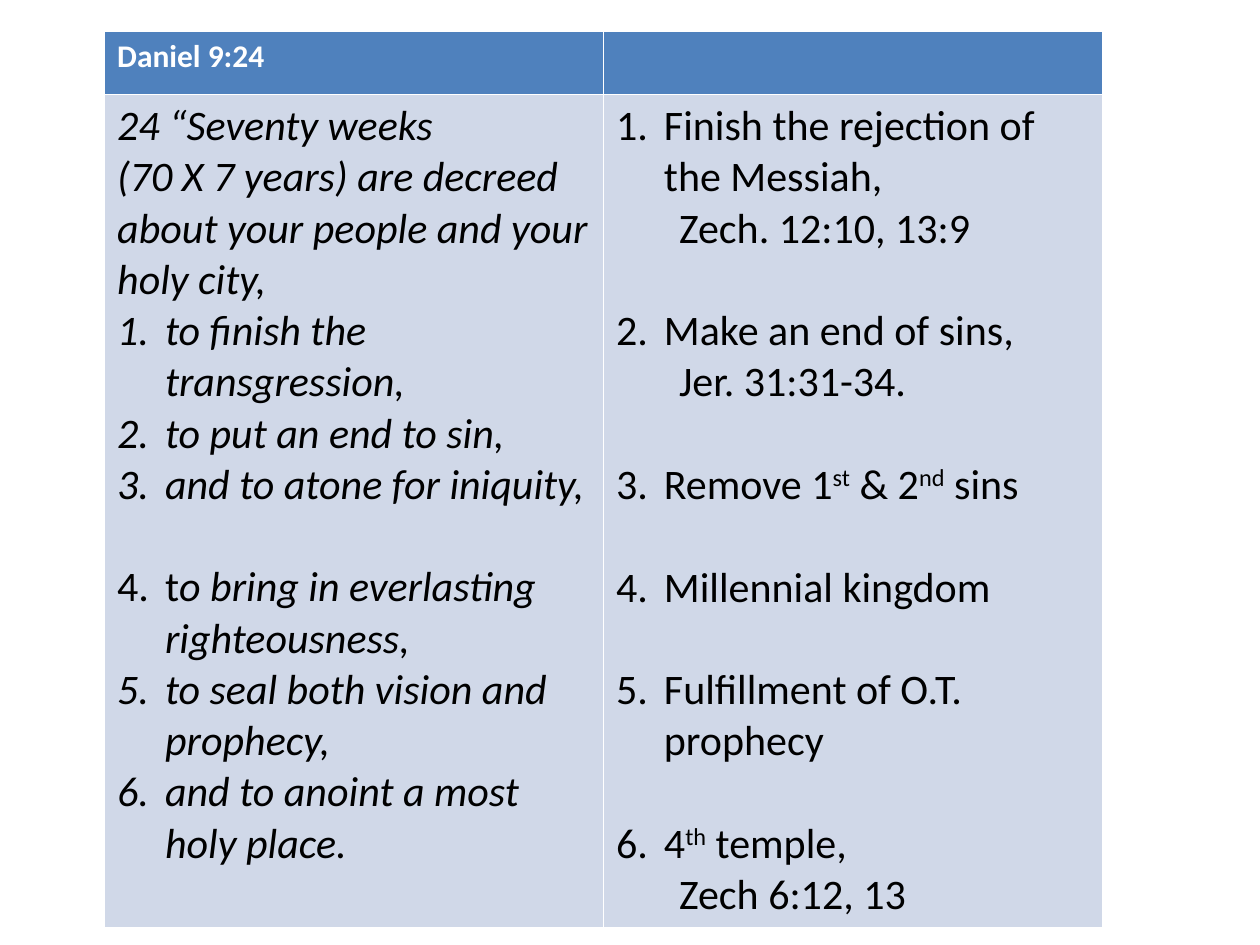
from lxml import etree
from pptx import Presentation, util as u
from pptx.dml.color import RGBColor
from pptx.oxml.ns import qn

COLORS = {"header": "4F81BD", "body": "D0D8E8", "white": "FFFFFF", "black": "000000"}
FONT = "Calibri"
BODY_SIZE = 24
BLANK_LINE = u.Pt(29.3)  # one line of body text
INDENT = u.Inches(0.38)

# Each line: kind, whether a gap precedes it, and its (text, style) runs
PROPHECY = [
    ("plain", False, [("24 “Seventy weeks", "italic")]),
    ("plain", False, [("(70 X 7 years) are decreed about your people and your holy city,", "italic")]),
    ("number", False, [("to finish the transgression,", "italic")]),
    ("number", False, [("to put an end to sin,", "italic")]),
    ("number", False, [("and to atone for iniquity,", "italic")]),
    ("number", True, [("t", ""), ("o bring in everlasting righteousness,", "italic")]),
    ("number", False, [("to seal both vision and prophecy,", "italic")]),
    ("number", False, [("and to anoint a most holy place.", "italic")]),
]
FULFILLMENT = [
    ("number", False, [("Finish the rejection of the Messiah,", "")]),
    ("verse", False, [("Zech. 12:10, 13:9", "")]),
    ("number", True, [("Make an end of sins,", "")]),
    ("verse", False, [("Jer. 31:31-34.", "")]),
    ("number", True, [("Remove 1", ""), ("st", "super"), (" & 2", ""),
                      ("nd", "super"), (" sins", "")]),
    ("number", True, [("Millennial kingdom", "")]),
    ("number", True, [("Fulfillment of O.T. prophecy", "")]),
    ("number", True, [("4", ""), ("th", "super"), (" temple,", "")]),
    ("verse", False, [("Zech 6:12, 13", "")]),
]


def style_run(run, size, color, bold=False, italic=False):
    run.font.name = FONT
    run.font.size = u.Pt(size)
    run.font.bold = bold
    run.font.italic = italic
    run.font.color.rgb = RGBColor.from_string(COLORS[color])


presentation = Presentation()
presentation.slide_width, presentation.slide_height = u.Inches(10), u.Inches(7.5)
slide = presentation.slides.add_slide(presentation.slide_layouts[6])

# Two equal columns under a header row
table = slide.shapes.add_table(
    2, 2, u.Inches(0.83), u.Inches(0.25), u.Inches(7.92), u.Inches(7.08)).table
for row, height, fill in zip(table.rows, (0.5, 6.58), ("header", "body")):
    row.height = u.Inches(height)
    for cell in row.cells:
        cell.fill.solid()
        cell.fill.fore_color.rgb = RGBColor.from_string(COLORS[fill])

# Header
title = table.cell(0, 0).text_frame
title.text = "Daniel 9:24"
style_run(title.paragraphs[0].runs[0], 18, "white", bold=True)

# Prophecy on the left, fulfillment on the right
for column, lines in enumerate((PROPHECY, FULFILLMENT)):
    text_frame = table.cell(1, column).text_frame
    for index, (kind, gap, runs) in enumerate(lines):
        paragraph = text_frame.add_paragraph() if index else text_frame.paragraphs[0]
        if gap:
            paragraph.space_before = BLANK_LINE
        properties = paragraph._p.get_or_add_pPr()
        if kind == "number":
            properties.set("marL", str(INDENT))
            properties.set("indent", str(-INDENT))
            bullet = etree.SubElement(properties, qn("a:buAutoNum"))
            bullet.set("type", "arabicPeriod")
        elif kind == "verse":
            paragraph.level = 1
            properties.set("marL", str(u.Inches(0.5)))
            properties.set("indent", "0")
        for words, style in runs:
            run = paragraph.add_run()
            run.text = words
            style_run(run, BODY_SIZE, "black", italic=style == "italic")
            if style == "super":
                run.font._element.set("baseline", "30000")

presentation.save("out.pptx")
